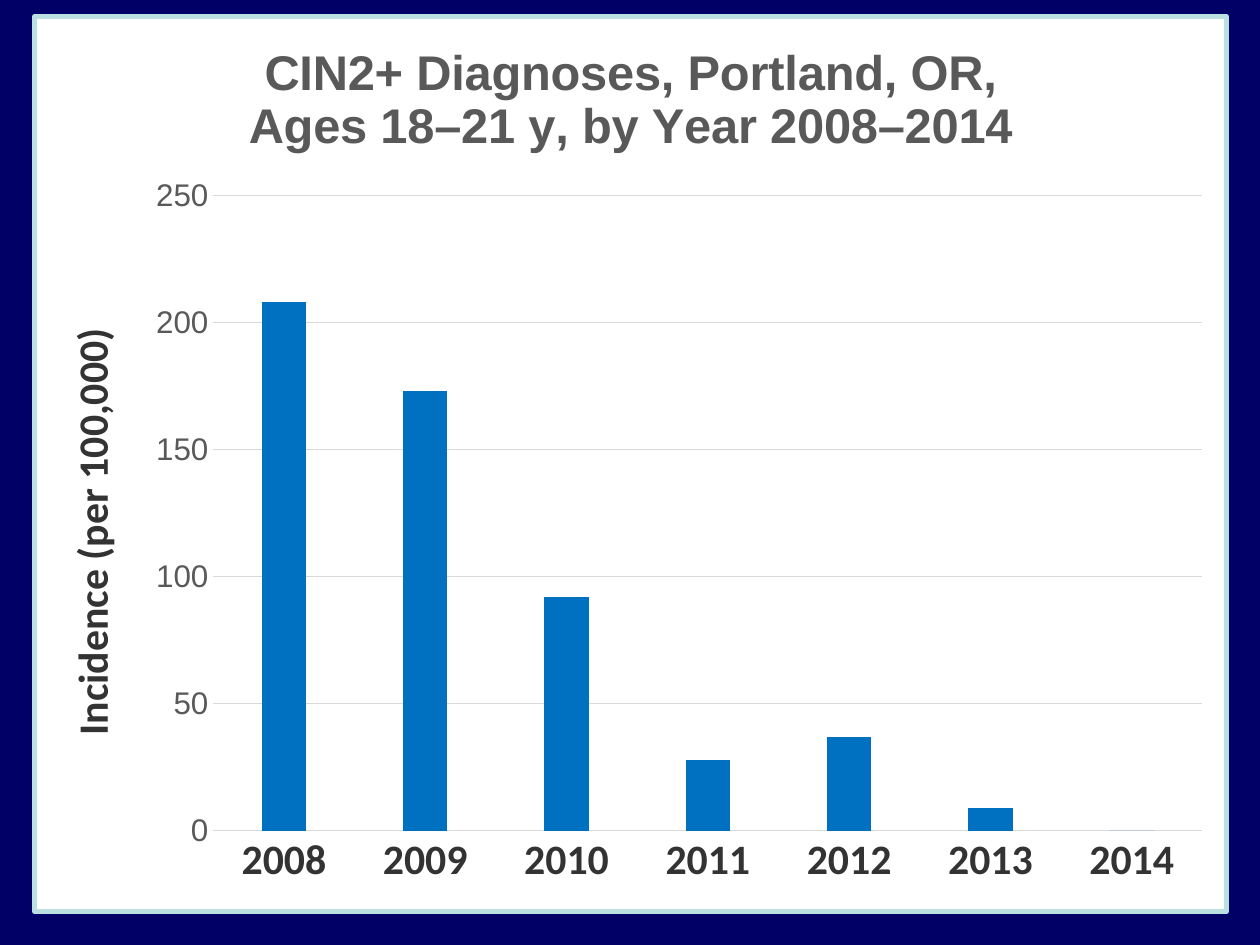
from lxml import etree
from pptx import Presentation
from pptx.chart.data import CategoryChartData
from pptx.dml.color import RGBColor
from pptx.enum.chart import XL_CHART_TYPE, XL_TICK_MARK
from pptx.oxml import parse_xml
from pptx.oxml.ns import nsdecls, qn
from pptx.util import Pt

PX = 914400 // 126
COLUMNS = XL_CHART_TYPE.COLUMN_CLUSTERED
NO_TICKS = XL_TICK_MARK.NONE
NAVY = RGBColor(0x00, 0x00, 0x66)
BLUE = RGBColor(0x00, 0x70, 0xC0)
PALE_TEAL = RGBColor(0xBB, 0xE0, 0xE3)
WHITE = RGBColor(0xFF, 0xFF, 0xFF)
BLACK = RGBColor(0x00, 0x00, 0x00)
DARK = RGBColor(0x33, 0x33, 0x33)
GRAY = RGBColor(0x59, 0x59, 0x59)
LIGHT_GRAY = RGBColor(0xD9, 0xD9, 0xD9)


def set_font(font, name, size, color, bold=False):
    font.name = name
    font.size = Pt(size)
    font.color.rgb = color
    font.bold = bold


def set_line(line, color, width):
    line.color.rgb = color
    line.width = Pt(width)


deck = Presentation()
deck.slide_width = 1260 * PX
deck.slide_height = 945 * PX
page = deck.slides.add_slide(deck.slide_layouts[6])
page.background.fill.solid()
page.background.fill.fore_color.rgb = NAVY

data = CategoryChartData()
data.categories = [str(year) for year in range(2008, 2015)]
data.add_series("Series 1", [208, 173, 92, 28, 37, 9, 0])
chart = page.shapes.add_chart(COLUMNS, 32 * PX, 14 * PX, 1197 * PX, 900 * PX, data).chart
set_font(chart.font, "Arial", 10, BLACK)
chart.has_legend = False

chart.has_title = True
title = chart.chart_title.text_frame
for index, text in enumerate(["CIN2+ Diagnoses, Portland, OR,", "Ages 18–21 y, by Year 2008–2014"]):
    para = title.add_paragraph() if index else title.paragraphs[0]
    span = para.add_run()
    span.text = text
    set_font(span.font, "Arial", 28, GRAY, True)

plot = chart.plots[0]
plot.gap_width = 219
plot.overlap = -27
plot.vary_by_categories = False
bars = plot.series[0].format.fill
bars.solid()
bars.fore_color.rgb = BLUE

years = chart.category_axis
years.major_tick_mark = NO_TICKS
years.minor_tick_mark = NO_TICKS
set_font(years.tick_labels.font, "Calibri", 24, DARK, True)
set_line(years.format.line, LIGHT_GRAY, 0.75)

incidence = chart.value_axis
incidence.minimum_scale = 0
incidence.maximum_scale = 250
incidence.major_unit = 50
incidence.major_tick_mark = NO_TICKS
incidence.minor_tick_mark = NO_TICKS
set_font(incidence.tick_labels.font, "Arial", 18, GRAY)
incidence.format.line.fill.background()
set_line(incidence.major_gridlines.format.line, LIGHT_GRAY, 0.75)
incidence.has_title = True
span = incidence.axis_title.text_frame.paragraphs[0].add_run()
span.text = "Incidence (per 100,000)"
set_font(span.font, "Calibri", 24, DARK, True)

chart_space = chart.element
plot_area = chart_space.find(".//" + qn("c:plotArea"))
layout = plot_area.find(qn("c:layout"))
if layout is None:
    layout = parse_xml(f"<c:layout {nsdecls('c')}/>")
    plot_area.insert(0, layout)
manual = etree.SubElement(layout, qn("c:manualLayout"))
for tag, value in [("layoutTarget", "inner"), ("xMode", "edge"), ("yMode", "edge"),
                   ("x", "0.15"), ("y", "0.2"), ("w", "0.83"), ("h", "0.71")]:
    etree.SubElement(manual, qn("c:" + tag)).set("val", value)

frame = parse_xml(
    f"<c:spPr {nsdecls('c', 'a')}>"
    f'<a:solidFill><a:srgbClr val="{WHITE}"/></a:solidFill>'
    f'<a:ln w="{Pt(3)}"><a:solidFill><a:srgbClr val="{PALE_TEAL}"/></a:solidFill></a:ln>'
    "</c:spPr>")
chart_space.find(qn("c:chart")).addnext(frame)

deck.save("out.pptx")
